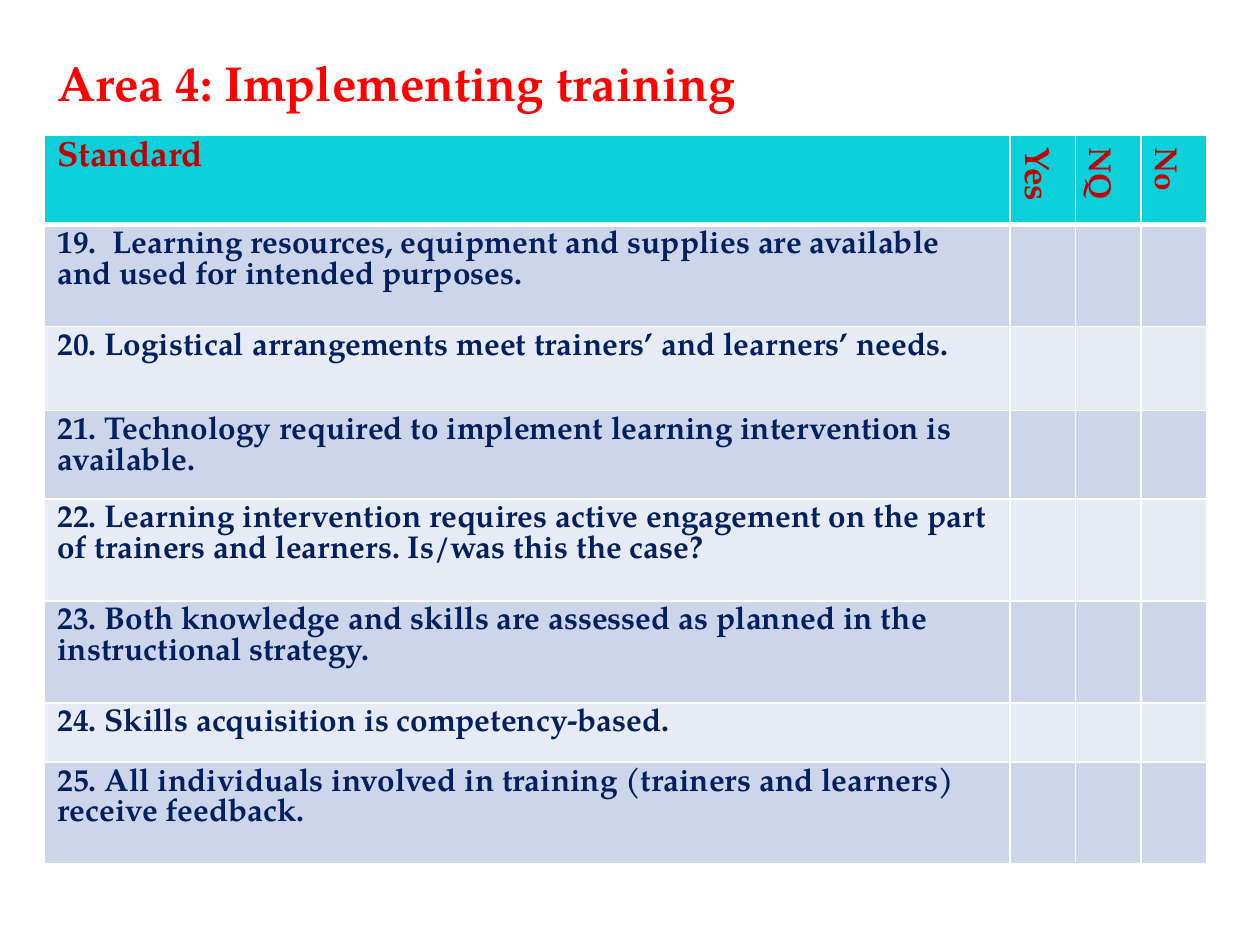
from lxml.etree import SubElement
from pptx import Presentation
from pptx.dml.color import RGBColor
from pptx.enum.text import MSO_ANCHOR, PP_ALIGN
from pptx.oxml.ns import qn
from pptx.util import Inches, Pt

FONT = "TeX Gyre Pagella"
TITLE_RED = RGBColor(0xFF, 0x00, 0x00)
HEADER_RED = RGBColor(0xC0, 0x00, 0x00)
NAVY = RGBColor(0x00, 0x20, 0x60)
WHITE = RGBColor(0xFF, 0xFF, 0xFF)
TURQUOISE = RGBColor(0x0B, 0xD0, 0xD9)
BANDS = [RGBColor(0xE7, 0xEB, 0xF5), RGBColor(0xCC, 0xD5, 0xEA)]

HEADERS = [("Standard", 20), ("Yes", 20), ("NQ", 18), ("No", 18)]
STANDARDS = [
    ("19.  Learning resources, equipment and supplies are available and used for intended purposes.", 0.81),
    ("20. Logistical arrangements meet trainers’ and learners’ needs.", 0.67),
    ("21. Technology required to implement learning intervention is available.", 0.7),
    ("22. Learning intervention requires active engagement on the part of trainers and learners. Is/was this the case?", 0.81),
    ("23. Both knowledge and skills are assessed as planned in the instructional strategy.", 0.81),
    ("24. Skills acquisition is competency-based.", 0.47),
    ("25. All individuals involved in training (trainers and learners) receive feedback.", 0.81),
]
COLUMN_WIDTHS = [7.66] + [0.52] * 3
ROW_HEIGHTS = [0.71] + [height for _, height in STANDARDS]
LEFT = 0.355


def write(tf, text, size, color):
    p = tf.paragraphs[0]
    p.alignment = PP_ALIGN.LEFT
    p.line_spacing = 1.0
    r = p.add_run()
    r.text = text
    for name, value in {"name": FONT, "size": Pt(size), "bold": True}.items():
        setattr(r.font, name, value)
    r.font.color.rgb = color


def add_border(cell, side, width):
    line = SubElement(cell._tc.get_or_add_tcPr(), qn(f"a:{side}"), w=str(Pt(width)))
    fill = SubElement(line, qn("a:solidFill"))
    SubElement(fill, qn("a:srgbClr"), val=str(WHITE))


prs = Presentation()
prs.slide_width, prs.slide_height = Inches(10), Inches(7.5)
s = prs.slides.add_slide(prs.slide_layouts[5])

title = s.shapes.title
box = {"left": LEFT, "top": 0.37, "width": 8.9, "height": 0.57}
for name, value in box.items():
    setattr(title, name, Inches(value))
title.text_frame.vertical_anchor = MSO_ANCHOR.TOP
write(title.text_frame, "Area 4: Implementing training", 28, TITLE_RED)

table = s.shapes.add_table(
    len(ROW_HEIGHTS), len(COLUMN_WIDTHS), Inches(LEFT), Inches(1.07),
    Inches(sum(COLUMN_WIDTHS)), Inches(sum(ROW_HEIGHTS)),
).table
for column, width in zip(table.columns, COLUMN_WIDTHS):
    column.width = Inches(width)
for i, (row, height) in enumerate(zip(table.rows, ROW_HEIGHTS)):
    row.height = Inches(height)
    for cell in row.cells:
        for side in ("lnL", "lnR", "lnT", "lnB"):
            header_edge = (i, side) in [(0, "lnB"), (1, "lnT")]
            add_border(cell, side, 3 if header_edge else 1)
        cell.fill.solid()
        cell.fill.fore_color.rgb = BANDS[i % 2] if i else TURQUOISE

for j, (text, size) in enumerate(HEADERS):
    cell = table.cell(0, j)
    write(cell.text_frame, text, size, HEADER_RED)
    if j:
        cell._tc.get_or_add_tcPr().set("vert", "vert")
for i, (text, _) in enumerate(STANDARDS, start=1):
    write(table.cell(i, 0).text_frame, text, 18, NAVY)

prs.save("out.pptx")
